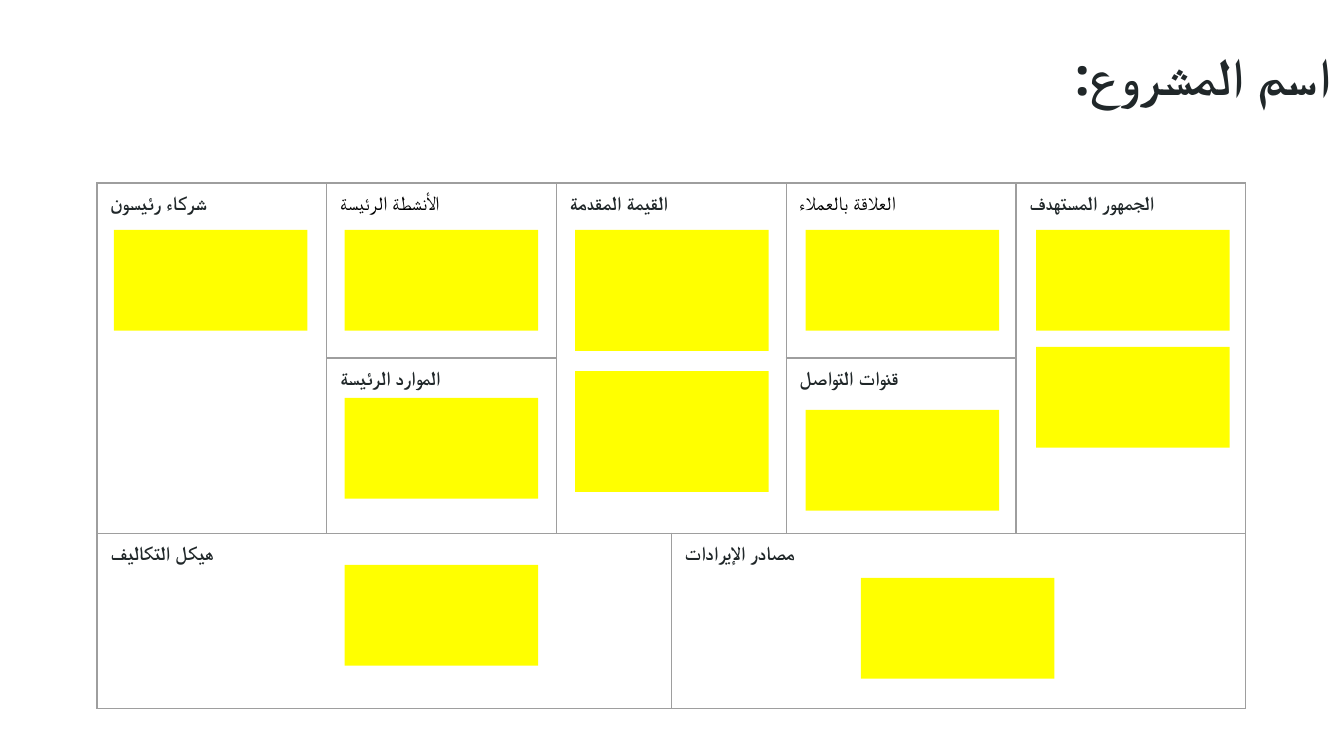
import pptx
import pptx.dml.color
import pptx.enum.shapes
import pptx.enum.text
import pptx.oxml.ns
import pptx.util
from lxml import etree

Pt = pptx.util.Pt
ALIGN = pptx.enum.text.PP_ALIGN

COLORS = {"text": "202729", "plain": "000000", "border": "9E9E9E", "note": "FFFF00"}
FONT = "Open Sans"
TITLE = "اسم المشروع:"

# Heading, first row, first column, rows spanned, columns spanned, bold
BLOCKS = [
    ("شركاء رئيسون", 0, 0, 2, 1, True),
    ("الأنشطة الرئيسة", 0, 1, 1, 1, False),
    ("القيمة المقدمة", 0, 2, 2, 2, True),
    ("العلاقة بالعملاء", 0, 4, 1, 1, False),
    ("الجمهور المستهدف", 0, 5, 2, 1, True),
    ("الموارد الرئيسة", 1, 1, 1, 1, True),
    ("قنوات التواصل", 1, 4, 1, 1, True),
    ("هيكل التكاليف", 2, 0, 1, 3, True),
    ("مصادر الإيرادات", 2, 3, 1, 3, True),
]
TABLE_LEFT, TABLE_TOP = 52, 98
HALF_COLUMN, ROW_HEIGHT = 61.55, 93.85
COLUMN_UNITS = [2, 2, 1, 1, 2, 2]

# Position across the five canvas columns, top, height
NOTES = [
    (4, 123.2, 54), (4, 185.8, 54),
    (2, 123.2, 64.8), (2, 198.8, 64.8),
    (3, 123.2, 54), (3, 219.6, 54),
    (1, 123.2, 54), (1, 213.2, 54),
    (0, 123.2, 54),
    (3.24, 309.6, 54), (1, 302.6, 54),
]
NOTE_LEFT, NOTE_PITCH, NOTE_WIDTH = 61.1, 123.5, 103.7


def rgb(name):
    return pptx.dml.color.RGBColor.from_string(COLORS[name])


def write_rtl(frame, text, size, color, bold, align):
    """Fill the frame with one right-to-left paragraph."""
    frame.text = text
    para = frame.paragraphs[0]
    para.alignment = align
    para._p.get_or_add_pPr().set("rtl", "1")
    span = para.runs[0]
    span.font.name = FONT
    span.font.size = Pt(size)
    span.font.bold = bold
    span.font.color.rgb = rgb(color)
    script_font = etree.SubElement(span.font._element, pptx.oxml.ns.qn("a:cs"))
    script_font.set("typeface", FONT)


def draw_borders(cell):
    properties = cell._tc.get_or_add_tcPr()
    for index, side in enumerate(("lnL", "lnR", "lnT", "lnB")):
        line = etree.Element(pptx.oxml.ns.qn("a:" + side), w=str(Pt(0.75)))
        fill = etree.SubElement(line, pptx.oxml.ns.qn("a:solidFill"))
        etree.SubElement(fill, pptx.oxml.ns.qn("a:srgbClr"), val=COLORS["border"])
        properties.insert(index, line)


def add_title(slide):
    title = slide.shapes.title
    title.left, title.top, title.width, title.height = Pt(134.6), Pt(16), Pt(585.4), Pt(65)
    frame = title.text_frame
    frame.margin_left = frame.margin_right = Pt(7.2)
    frame.margin_top = frame.margin_bottom = Pt(7.2)
    frame.vertical_anchor = pptx.enum.text.MSO_ANCHOR.TOP
    frame.auto_size = pptx.enum.text.MSO_AUTO_SIZE.NONE
    write_rtl(frame, TITLE, 28, "text", True, ALIGN.RIGHT)


def add_canvas(slide):
    table = slide.shapes.add_table(
        3, len(COLUMN_UNITS), Pt(TABLE_LEFT), Pt(TABLE_TOP),
        Pt(HALF_COLUMN * sum(COLUMN_UNITS)), Pt(ROW_HEIGHT * 3)).table
    table.first_row = table.horz_banding = False
    for column, units in zip(table.columns, COLUMN_UNITS):
        column.width = Pt(HALF_COLUMN * units)
    for row in table.rows:
        row.height = Pt(ROW_HEIGHT)
    for cell in table.iter_cells():
        cell.fill.background()
        draw_borders(cell)
    for heading, row, column, rows, columns, bold in BLOCKS:
        cell = table.cell(row, column)
        if rows * columns > 1:
            cell.merge(table.cell(row + rows - 1, column + columns - 1))
        write_rtl(cell.text_frame, heading, 10.5,
                  "text" if bold else "plain", bold, ALIGN.LEFT)


def add_notes(slide):
    for position, top, height in NOTES:
        note = slide.shapes.add_shape(
            pptx.enum.shapes.MSO_SHAPE.RECTANGLE,
            Pt(NOTE_LEFT + position * NOTE_PITCH), Pt(top), Pt(NOTE_WIDTH), Pt(height))
        note.shadow.inherit = False
        note.fill.solid()
        note.fill.fore_color.rgb = rgb("note")
        note.line.fill.background()


def main():
    deck = pptx.Presentation()
    deck.slide_width, deck.slide_height = Pt(720), Pt(405)
    slide = deck.slides.add_slide(deck.slide_layouts[5])
    add_title(slide)
    add_canvas(slide)
    add_notes(slide)
    deck.save("out.pptx")


if __name__ == "__main__":
    main()
